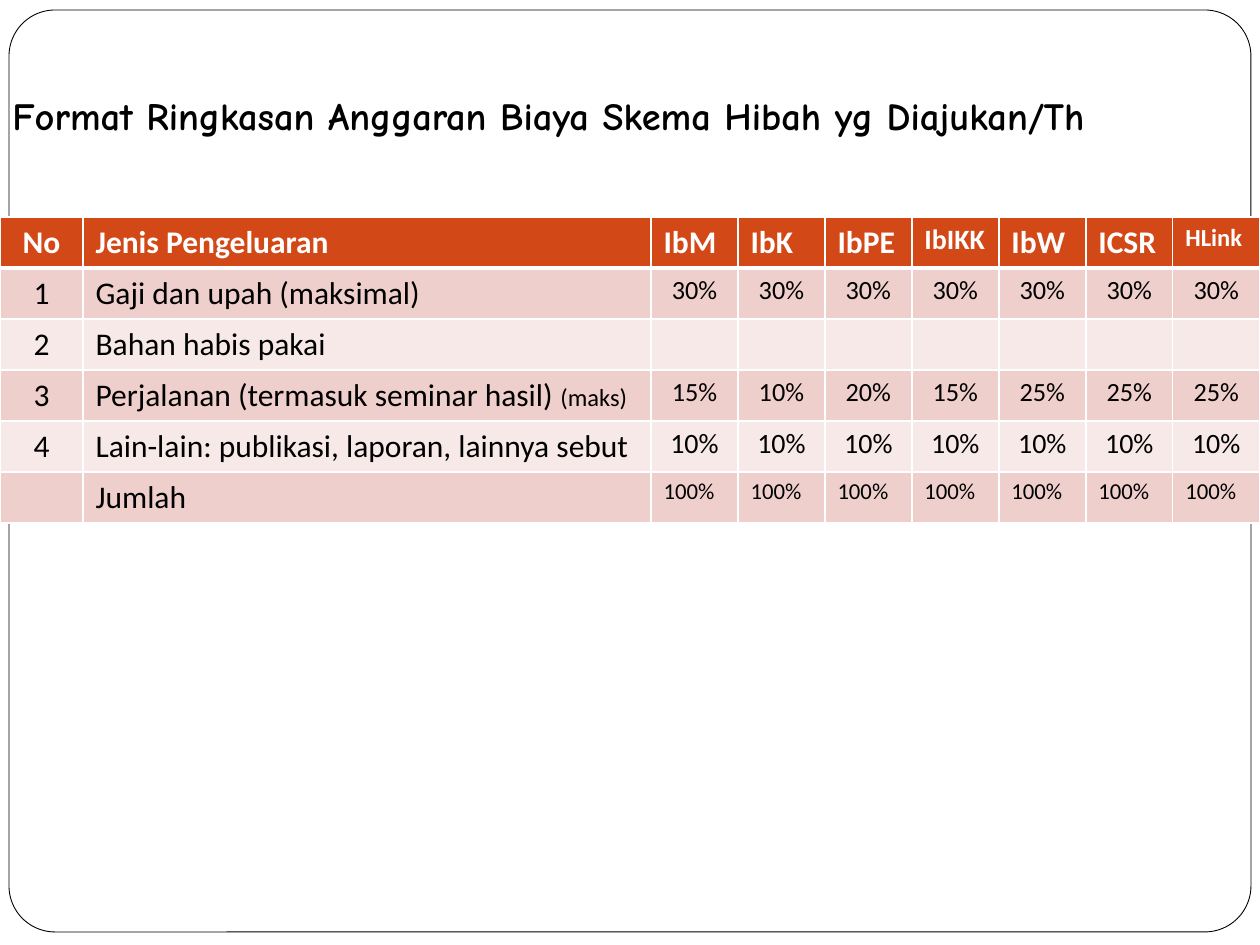
"""Build the grant budget summary slide."""

from dataclasses import dataclass

from lxml.etree import SubElement
from pptx import Presentation
from pptx.dml.color import RGBColor
from pptx.enum.shapes import MSO_SHAPE
from pptx.enum.text import MSO_ANCHOR, PP_ALIGN
from pptx.oxml.ns import qn
from pptx.util import Emu, Pt

PX_PER_INCH = 126
EMU_PER_INCH = 914400


@dataclass(frozen=True)
class Theme:
    white: str = "FFFFFF"
    black: str = "000000"
    header: str = "D34817"
    bands: tuple[str, str] = ("EFCFCC", "F7E9E8")
    title_font: str = "Comic Neue"
    table_font: str = "Calibri"
    title_size: int = 22
    text_size: int = 18
    note_size: int = 14
    rule: int = 1
    header_rule: int = 3


@dataclass(frozen=True)
class Box:
    left: int
    top: int
    width: int
    height: int


@dataclass(frozen=True)
class BudgetRow:
    number: str
    label: str
    shares: tuple[str, ...]
    share_size: int
    note: str = ""
    share_align: PP_ALIGN = PP_ALIGN.CENTER


@dataclass(frozen=True)
class CellStyle:
    fill: str
    color: str
    bold: bool
    bottom_rule: int


THEME = Theme()
FRAME = Box(9, 10, 1242, 922)
TITLE = Box(0, 38, 1231, 157)
TABLE = Box(0, 217, 1260, 306)
NUMBER_WIDTH, SHARE_WIDTH = 83, 87
SCHEMES = ("IbM", "IbK", "IbPE", "IbIKK", "IbW", "ICSR", "HLink")
SCHEME_SIZES = {"IbIKK": 16, "HLink": 14}
COUNT = len(SCHEMES)
ROWS = (
    BudgetRow("1", "Gaji dan upah (maksimal)", ("30%",) * COUNT, 15),
    BudgetRow("2", "Bahan habis pakai", ("",) * COUNT, 15),
    BudgetRow("3", "Perjalanan (termasuk seminar hasil) ",
              ("15%", "10%", "20%", "15%", "25%", "25%", "25%"), 15, "(maks)"),
    BudgetRow("4", "Lain-lain: publikasi, laporan, lainnya sebut", ("10%",) * COUNT, 16),
    BudgetRow("", "Jumlah", ("100%",) * COUNT, 13, share_align=PP_ALIGN.LEFT),
)


def px(length: int) -> Emu:
    """Turn pixels into EMU."""
    return Emu(round(length * EMU_PER_INCH / PX_PER_INCH))


def place(box: Box) -> tuple[Emu, Emu, Emu, Emu]:
    """Return the position and size of a box in EMU."""
    return px(box.left), px(box.top), px(box.width), px(box.height)


def set_font(font, name: str, size: int, color: str, bold: bool) -> None:
    """Set the look of a paragraph font."""
    font.name, font.size, font.bold = name, Pt(size), bold
    font.color.rgb = RGBColor.from_string(color)


def draw_frame(slide) -> None:
    """Draw the rounded page frame."""
    frame = slide.shapes.add_shape(MSO_SHAPE.ROUNDED_RECTANGLE, *place(FRAME))
    frame.adjustments[0] = 0.05
    frame.shadow.inherit = False
    frame.fill.solid()
    frame.fill.fore_color.rgb = RGBColor.from_string(THEME.white)
    frame.line.color.rgb = RGBColor.from_string(THEME.black)
    frame.line.width = Pt(0.5)


def draw_title(slide, text: str) -> None:
    """Write the slide title."""
    text_frame = slide.shapes.add_textbox(*place(TITLE)).text_frame
    text_frame.word_wrap = True
    text_frame.vertical_anchor = MSO_ANCHOR.BOTTOM
    text_frame.margin_bottom = px(57)
    para = text_frame.paragraphs[0]
    para.text = text
    set_font(para.font, THEME.title_font, THEME.title_size, THEME.black, True)


def set_borders(cell, bottom_rule: int) -> None:
    """Give a cell white borders ahead of its fill."""
    properties = cell._tc.get_or_add_tcPr()
    rules = {"lnL": THEME.rule, "lnR": THEME.rule, "lnT": THEME.rule, "lnB": bottom_rule}
    for position, (side, width) in enumerate(rules.items()):
        border = SubElement(properties, qn(f"a:{side}"), w=str(Pt(width)))
        fill = SubElement(border, qn("a:solidFill"))
        SubElement(fill, qn("a:srgbClr"), val=THEME.white)
        properties.insert(position, border)


def fill_cell(cell, text: str, size: int, align: PP_ALIGN, style: CellStyle, note: str = "") -> None:
    """Write and style one table cell."""
    cell.fill.solid()
    cell.fill.fore_color.rgb = RGBColor.from_string(style.fill)
    set_borders(cell, style.bottom_rule)
    para = cell.text_frame.paragraphs[0]
    para.alignment = align
    set_font(para.font, THEME.table_font, size, style.color, style.bold)
    if text:
        para.add_run().text = text
    if note:
        span = para.add_run()
        span.text = note
        span.font.size = Pt(THEME.note_size)


def draw_table(slide) -> None:
    """Draw the budget table."""
    table = slide.shapes.add_table(len(ROWS) + 1, COUNT + 2, *place(TABLE)).table
    label_width = TABLE.width - NUMBER_WIDTH - COUNT * SHARE_WIDTH
    widths = (NUMBER_WIDTH, label_width, *(SHARE_WIDTH,) * COUNT)
    for column, width in zip(table.columns, widths):
        column.width = px(width)

    header = CellStyle(THEME.header, THEME.white, True, THEME.header_rule)
    fill_cell(table.cell(0, 0), "No", THEME.text_size, PP_ALIGN.CENTER, header)
    for column, text in enumerate(("Jenis Pengeluaran", *SCHEMES), start=1):
        size = SCHEME_SIZES.get(text, THEME.text_size)
        fill_cell(table.cell(0, column), text, size, PP_ALIGN.LEFT, header)

    for index, row in enumerate(ROWS, start=1):
        style = CellStyle(THEME.bands[(index - 1) % 2], THEME.black, False, THEME.rule)
        fill_cell(table.cell(index, 0), row.number, THEME.text_size, PP_ALIGN.CENTER, style)
        fill_cell(table.cell(index, 1), row.label, THEME.text_size, PP_ALIGN.LEFT, style, row.note)
        for column, share in enumerate(row.shares, start=2):
            fill_cell(table.cell(index, column), share, row.share_size, row.share_align, style)


def main() -> None:
    """Build and save the deck."""
    deck = Presentation()
    deck.slide_width, deck.slide_height = px(1260), px(945)
    page = deck.slides.add_slide(deck.slide_layouts[6])
    draw_frame(page)
    draw_title(page, "Format Ringkasan Anggaran Biaya Skema Hibah yg Diajukan/Th")
    draw_table(page)
    deck.save("out.pptx")


if __name__ == "__main__":
    main()
